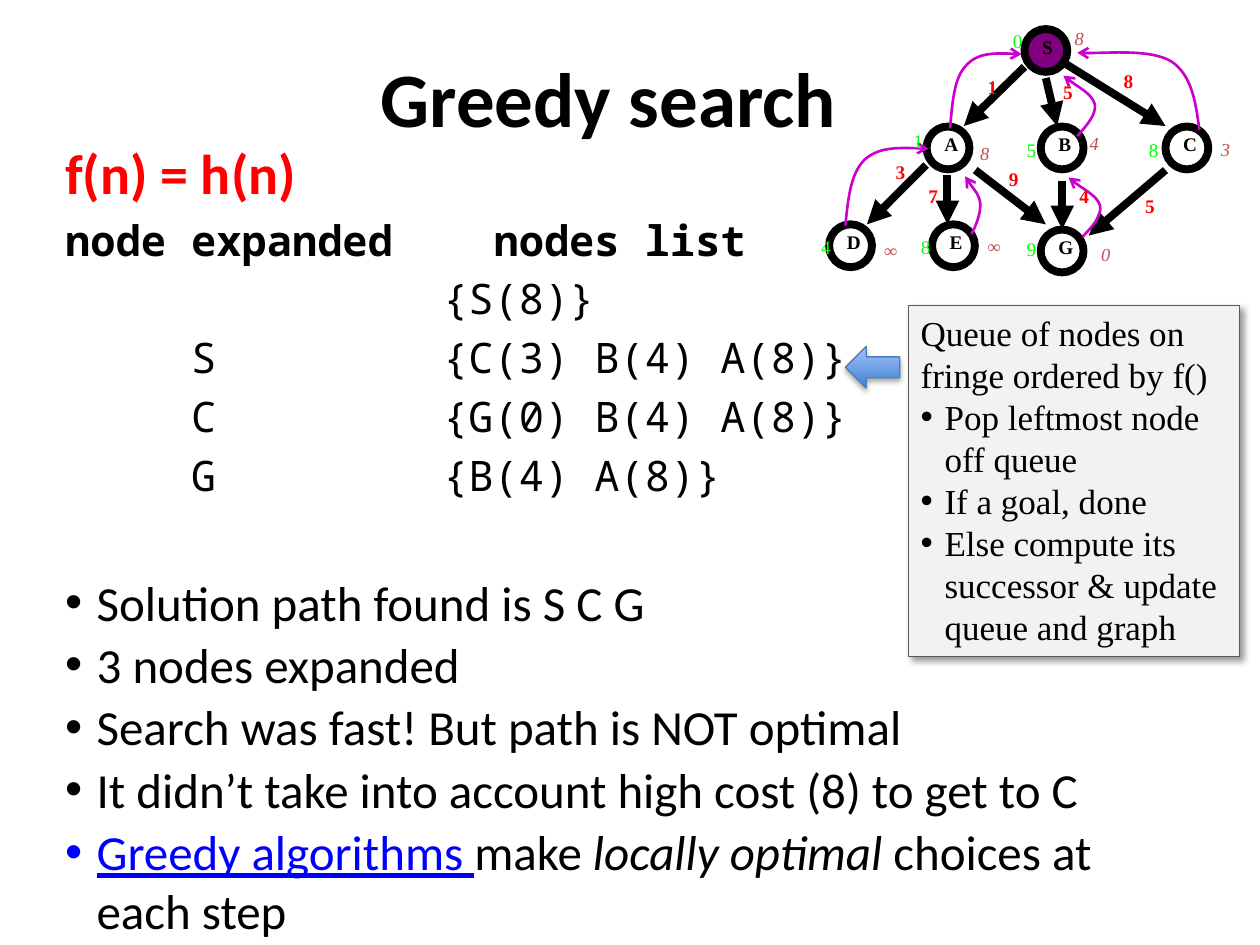
from lxml import etree
from pptx import Presentation
from pptx.dml.color import RGBColor
from pptx.enum.shapes import MSO_CONNECTOR, MSO_SHAPE
from pptx.enum.text import MSO_ANCHOR, MSO_AUTO_SIZE, PP_ALIGN
from pptx.oxml.ns import qn
from pptx.util import Pt

STRAIGHT = MSO_CONNECTOR.STRAIGHT
OVAL, RECTANGLE, LEFT_ARROW = MSO_SHAPE.OVAL, MSO_SHAPE.RECTANGLE, MSO_SHAPE.LEFT_ARROW
TOP, MIDDLE = MSO_ANCHOR.TOP, MSO_ANCHOR.MIDDLE
CENTER, LEFT = PP_ALIGN.CENTER, PP_ALIGN.LEFT
FIT_SHAPE = MSO_AUTO_SIZE.SHAPE_TO_FIT_TEXT
COLORS = {
    "black": "000000", "red": "FF0000", "blue": "0000FF", "green": "00FF00",
    "brick": "C0504D", "purple": "800080", "magenta": "CC00CC",
    "panel": "F2F2F2", "panel_line": "595959",
    "arrow_low": "3F80CE", "arrow_high": "A4C4FF", "arrow_line": "4B7EBC",
}
RGB = {name: RGBColor.from_string(value) for name, value in COLORS.items()}
HEADING = {"name": "Calibri", "size": Pt(32), "bold": True}
CODE = {"name": "Noto Sans Mono", "size": Pt(24)}
BODY = {"name": "Calibri", "size": Pt(28)}
PANEL = {"name": "Times New Roman", "size": Pt(20)}
NODE = {"name": "Times New Roman", "size": Pt(11), "bold": True}
PATH_COST = {"name": "Times New Roman", "size": Pt(11)}
ESTIMATE = {"name": "Times New Roman", "size": Pt(10.5), "italic": True}


def add_child(parent, tag, **attributes):
    child = etree.SubElement(parent, qn(tag))
    for name, value in attributes.items():
        child.set(name, str(value))
    return child


def write(paragraph, text, style, color="black", before=0, indent=0, tabs=()):
    paragraph.alignment = LEFT
    paragraph.space_before = Pt(before)
    properties = paragraph._p.get_or_add_pPr()
    if indent:
        properties.set("marL", str(Pt(indent)))
        properties.set("indent", str(-Pt(indent)))
        add_child(properties, "a:buFont", typeface="Arial")
        add_child(properties, "a:buChar", char="•")
    if tabs:
        tab_list = add_child(properties, "a:tabLst")
        for position in tabs:
            add_child(tab_list, "a:tab", pos=Pt(position), algn="l")
    run = paragraph.add_run()
    run.text = text
    for name, value in style.items():
        setattr(run.font, name, value)
    run.font.color.rgb = RGB[color]


presentation = Presentation()
presentation.slide_width, presentation.slide_height = Pt(720), Pt(540)
slide = presentation.slides.add_slide(presentation.slide_layouts[6])

title = slide.shapes.add_textbox(Pt(41.8), Pt(5.8), Pt(612), Pt(99.4))
title.text_frame.word_wrap = True
title.text_frame.vertical_anchor = MIDDLE
write(title.text_frame.paragraphs[0], "Greedy search", {**HEADING, "size": Pt(44)})
title.text_frame.paragraphs[0].alignment = CENTER

body = slide.shapes.add_textbox(Pt(30.2), Pt(75.6), Pt(615), Pt(453))
body.text_frame.word_wrap = True
write(body.text_frame.paragraphs[0], "f(n) = h(n)", HEADING, "red", before=6)
write(body.text_frame.add_paragraph(), "node expanded\tnodes list",
      {**CODE, "bold": True}, before=4.8, tabs=[244.8])
for expanded, queue in [("", "{S(8)}"), ("S", "{C(3) B(4) A(8)}"),
                        ("C", "{G(0) B(4) A(8)}"), ("G", "{B(4) A(8)}")]:
    write(body.text_frame.add_paragraph(), f"\t{expanded}\t{queue}", CODE,
          before=4.8, tabs=[72, 216])
for text, before in [("Solution path found is S C G", 41.5), ("3 nodes expanded", 2),
                     ("Search was fast! But path is NOT optimal", 2),
                     ("It didn’t take into account high cost (8) to get to C", 2)]:
    write(body.text_frame.add_paragraph(), text, BODY, before=before, indent=18)
closing = body.text_frame.add_paragraph()
write(closing, "Greedy algorithms ", {**BODY, "underline": True}, "blue", 2, 18)
for text, italic in [("make ", False), ("locally optimal ", True),
                     ("choices at each step", False)]:
    run = closing.add_run()
    run.text = text
    for name, value in {**BODY, "italic": italic}.items():
        setattr(run.font, name, value)
    run.font.color.rgb = RGB["black"]

graph = slide.shapes.add_group_shape().shapes
labels = []
for name, left, top in [("S", 585.4, 16.6), ("C", 666, 72.3), ("B", 594.7, 72.3),
                        ("A", 529.5, 72.3), ("D", 473.8, 128.2),
                        ("G", 594.7, 131.2), ("E", 532.6, 128.2)]:
    circle = graph.add_shape(OVAL, Pt(left), Pt(top), Pt(24.5), Pt(24.5))
    circle.shadow.inherit = False
    circle.fill.background()
    if name == "S":
        circle.fill.solid()
        circle.fill.fore_color.rgb = RGB["purple"]
    circle.line.color.rgb = RGB["black"]
    circle.line.width = Pt(4.5)
    labels.append((name, left + 3, top, 21.3, NODE, "black"))

for x1, y1, x2, y2 in [
    (585.4, 38.2, 550.8, 72), (541.4, 100.1, 541.4, 128.2),
    (557.3, 97.2, 597.6, 128.2), (597.6, 44.6, 604.1, 72),
    (607, 35.3, 666, 72), (607, 103.7, 607, 131),
    (666, 97.2, 622.1, 134.6), (529.2, 94.3, 495.4, 128.2),
]:
    edge = graph.add_connector(STRAIGHT, Pt(x1), Pt(y1), Pt(x2), Pt(y2))
    edge.line.color.rgb = RGB["black"]
    edge.line.width = Pt(4.5)
    add_child(edge.line._get_or_add_ln(), "a:tailEnd", type="triangle")
    add_child(edge._element.spPr, "a:effectLst")

for points in [
    [(542.9, 73.4), (544.3, 59), (545, 44.6), (552.2, 37.4), (558.7, 30.2), (571.7, 30.2), (583.9, 31)],
    [(483.1, 128.9), (484.6, 113.8), (486, 99.4), (493.9, 91.4), (501.8, 84.2), (516.2, 84.2), (530.6, 85)],
    [(555.1, 133.9), (558, 128.2), (560.2, 122.4), (560.2, 116.6), (559.4, 110.9), (553, 103.7), (551.5, 100.8)],
    [(618.5, 135.4), (624.2, 129.6), (630, 123.1), (628.6, 117.4), (627.1, 112.3), (613.4, 104.4), (610.6, 101.5)],
    [(615.6, 77.8), (621.4, 71.3), (626.4, 65.5), (625.7, 59.8), (624.2, 54), (610.6, 46.1), (607.7, 43.2)],
    [(685.4, 74.2), (683.3, 58.3), (681.1, 43.2), (669.6, 35.3), (658.1, 28.1), (625, 31), (615.6, 30.2)],
]:
    points = [(Pt(x), Pt(y)) for x, y in points]
    builder = graph.build_freeform(*points[0])
    builder.add_line_segments(points[1:], close=False)
    back_pointer = builder.convert_to_shape()
    back_pointer.shadow.inherit = False
    back_pointer.fill.background()
    back_pointer.line.color.rgb = RGB["magenta"]
    back_pointer.line.width = Pt(1.5)
    add_child(back_pointer.line._get_or_add_ln(), "a:tailEnd", type="arrow")
    segments = list(back_pointer._element.iter(qn("a:lnTo")))
    outline = segments[0].getparent()
    for start in range(0, len(segments), 3):
        curve = add_child(outline, "a:cubicBezTo")
        for segment in segments[start:start + 3]:
            curve.append(segment[0])
            outline.remove(segment)

for style, color, width, entries in [
    (NODE, "red", 19.4, [
        ("1", 557.3, 39.6), ("5", 600.5, 42.5), ("8", 635, 36), ("9", 569.5, 92.2),
        ("4", 609.8, 101.5), ("5", 647.3, 107.3), ("3", 504.7, 87.8), ("7", 523.4, 101.5)]),
    (ESTIMATE, "brick", 23, [
        ("8", 607, 12.2), ("8", 553, 77.8), ("4", 615.6, 72), ("3", 690.5, 75.6),
        ("∞", 557.3, 131), ("∞", 498.2, 133.2), ("0", 622.1, 135.4)]),
    (PATH_COST, "green", 19.4, [
        ("0", 571.7, 13), ("1", 514.8, 70.6), ("4", 462.2, 131), ("8", 519.1, 131),
        ("9", 579.6, 131.8), ("8", 649.4, 75.6), ("5", 579.6, 75.6)]),
]:
    labels += [(text, left, top, width, style, color) for text, left, top in entries]

for text, left, top, width, style, color in labels:
    label = graph.add_textbox(Pt(left), Pt(top), Pt(width), Pt(19.4))
    label.text_frame.word_wrap = False
    label.text_frame.auto_size = FIT_SHAPE
    write(label.text_frame.paragraphs[0], text, style, color)

panel = slide.shapes.add_shape(RECTANGLE, Pt(519), Pt(174.2), Pt(189.4), Pt(200.9))
panel.fill.solid()
panel.fill.fore_color.rgb = RGB["panel"]
panel.line.color.rgb = RGB["panel_line"]
panel.line.width = Pt(0.25)
panel.text_frame.word_wrap = True
panel.text_frame.auto_size = FIT_SHAPE
panel.text_frame.vertical_anchor = TOP
write(panel.text_frame.paragraphs[0], "Queue of nodes on fringe ordered by f()", PANEL)
for text in ["Pop leftmost node off queue", "If a goal, done",
             "Else compute its successor & update queue and graph"]:
    write(panel.text_frame.add_paragraph(), text, PANEL, indent=13.7)

pointer = slide.shapes.add_shape(LEFT_ARROW, Pt(483.1), Pt(198), Pt(31), Pt(23.8))
pointer.fill.gradient()
pointer.fill.gradient_angle = 90
for stop, color in zip(pointer.fill.gradient_stops, ["arrow_low", "arrow_high"]):
    stop.color.rgb = RGB[color]
pointer.line.color.rgb = RGB["arrow_line"]
pointer.line.width = Pt(0.75)

for shape, opacity, blur, distance, angle in [(panel, 40, 4, 3, 45),
                                              (pointer, 35, 3.1, 1.8, 90)]:
    shape.shadow.inherit = False
    effects = shape._element.spPr.find(qn("a:effectLst"))
    shadow = add_child(effects, "a:outerShdw", blurRad=Pt(blur), dist=Pt(distance),
                       dir=angle * 60000, algn="tl", rotWithShape=0)
    shadow_color = add_child(shadow, "a:srgbClr", val=COLORS["black"])
    add_child(shadow_color, "a:alpha", val=opacity * 1000)

presentation.save("out.pptx")
